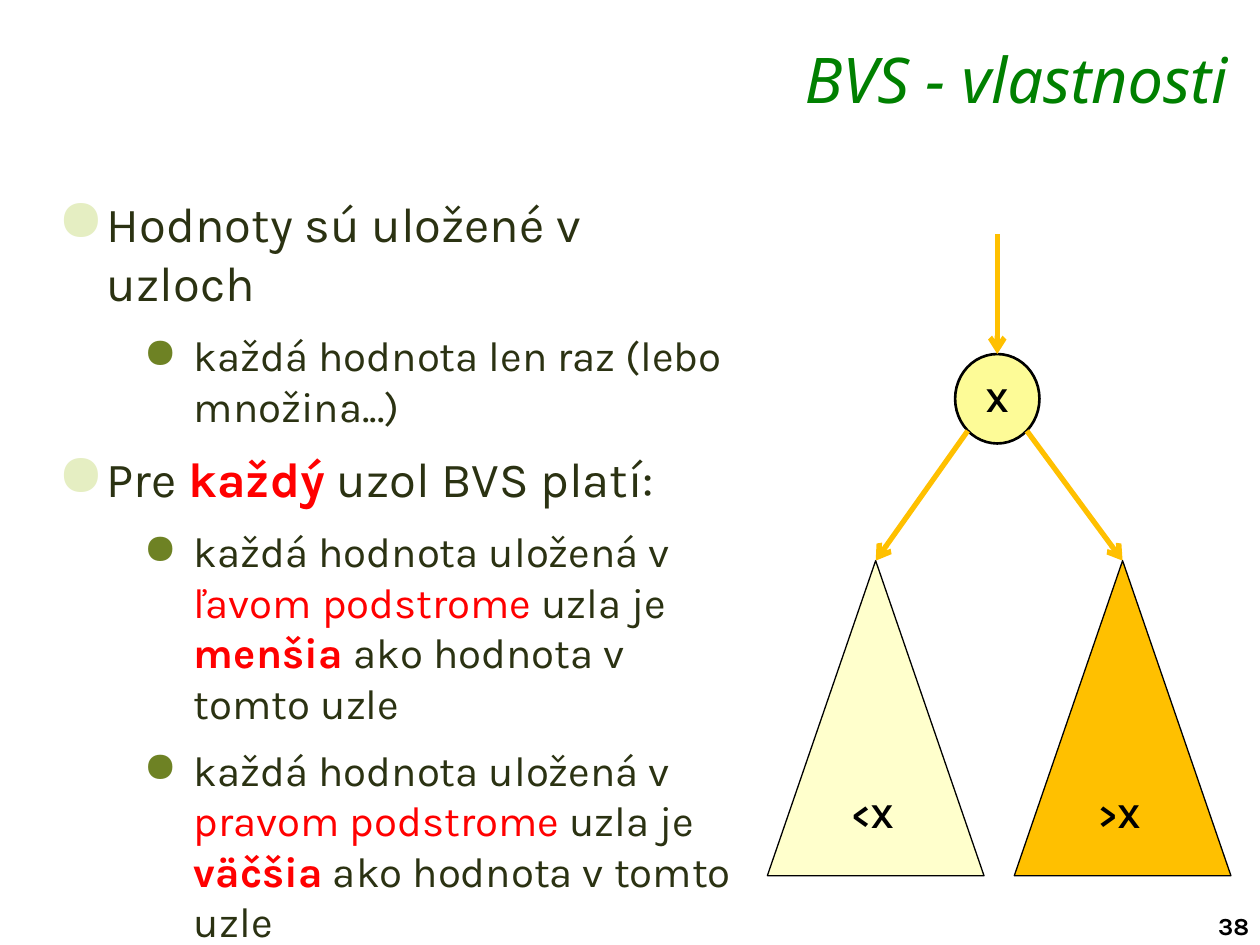
from lxml import etree
from pptx import Presentation
from pptx.dml.color import RGBColor
from pptx.enum.shapes import MSO_CONNECTOR, MSO_SHAPE
from pptx.enum.text import MSO_ANCHOR, PP_ALIGN
from pptx.oxml.ns import qn
from pptx.util import Pt

LEFT, MID, RIGHT = PP_ALIGN.LEFT, PP_ALIGN.CENTER, PP_ALIGN.RIGHT
TOP, CENTER = MSO_ANCHOR.TOP, MSO_ANCHOR.MIDDLE
DISC, PEAK = MSO_SHAPE.FLOWCHART_CONNECTOR, MSO_SHAPE.ISOSCELES_TRIANGLE
STRAIGHT = MSO_CONNECTOR.STRAIGHT

HUES = {"ink": "2B3212", "red": "FF0000", "green": "008000", "black": "000000",
        "pale": "E5EEC2", "olive": "6E8224", "gold": "FFC000",
        "lemon": "FDFB97", "cream": "FFFFCC"}

RUNS = {
    "plain": {"bold": False, "hue": "ink"},
    "red": {"bold": False, "hue": "red"},
    "strong": {"bold": True, "hue": "red"},
    "title": {"name": "Noto Sans", "size": Pt(36), "italic": True, "hue": "green"},
    "label": {"name": "Karla", "size": Pt(20), "bold": True, "hue": "black"},
    "page": {"name": "Karla", "size": Pt(14), "bold": True, "hue": "black"},
}
LEVELS = [
    {"size": 28, "left": 28.1, "hang": 28.1, "hue": "pale", "scale": 120},
    {"size": 24, "left": 77.8, "hang": 28.8, "hue": "olive", "scale": 100},
]
BODY = [
    (0, [("Hodnoty sú uložené v uzloch", "plain")]),
    (1, [("každá hodnota len raz (lebo množina...)", "plain")]),
    (0, [("Pre ", "plain"), ("každý", "strong"), (" uzol BVS platí:", "plain")]),
    (1, [("každá hodnota uložená v ", "plain"), ("ľavom podstrome ", "red"),
         ("uzla je ", "plain"), ("menšia ", "strong"),
         ("ako hodnota v tomto uzle", "plain")]),
    (1, [("každá hodnota uložená v ", "plain"), ("pravom podstrome ", "red"),
         ("uzla je ", "plain"), ("väčšia", "strong"),
         (" ako hodnota v tomto uzle", "plain")]),
]
NODE = (545.8, 202.3, 48.2, 51.1)
TREES = [("<X", 438.5, "cream", 553), (">X", 579.6, "gold", 586.8)]
TREE_TOP, TREE_WIDE, TREE_HIGH = 320.4, 123.8, 180
LABEL_IN, LABEL_TOP = 41, 450


def style(font, form):
    for key, val in form.items():
        if key == "hue":
            font.color.rgb = RGBColor.from_string(HUES[val])
        else:
            setattr(font, key, val)


def write(frame, text, kind, align=LEFT, anchor=TOP, wrap=False):
    frame.word_wrap = wrap
    frame.vertical_anchor = anchor
    para = frame.paragraphs[0]
    para.alignment = align
    run = para.add_run()
    run.text = text
    style(run.font, RUNS[kind])


def textbox(box):
    return slide.shapes.add_textbox(*map(Pt, box)).text_frame


def shape(kind, box, fill, width):
    item = slide.shapes.add_shape(kind, *map(Pt, box))
    item.shadow.inherit = False
    item.fill.solid()
    item.fill.fore_color.rgb = RGBColor.from_string(HUES[fill])
    item.line.color.rgb = RGBColor.from_string(HUES["black"])
    item.line.width = Pt(width)
    return item


def arrow(*ends):
    item = slide.shapes.add_connector(STRAIGHT, *map(Pt, ends))
    item.line.color.rgb = RGBColor.from_string(HUES["gold"])
    item.line.width = Pt(3)
    etree.SubElement(item.line._get_or_add_ln(), qn("a:tailEnd"), type="arrow")
    etree.SubElement(item._element.spPr, qn("a:effectLst"))


def bullet(para, level):
    prop = para._p.get_or_add_pPr()
    prop.set("marL", str(Pt(level["left"])))
    prop.set("indent", str(-Pt(level["hang"])))
    hue = etree.SubElement(prop, qn("a:buClr"))
    etree.SubElement(hue, qn("a:srgbClr"), val=HUES[level["hue"]])
    etree.SubElement(prop, qn("a:buSzPct"), val=str(level["scale"] * 1000))
    etree.SubElement(prop, qn("a:buChar"), char="●")


deck = Presentation()
deck.slide_width, deck.slide_height = Pt(720), Pt(540)
slide = deck.slides.add_slide(deck.slide_layouts[6])

write(textbox((689, 517, 36.7, 23.8)), "38", "page")

title = textbox((164.9, 22.3, 543.6, 41.8))
title.margin_top = Pt(1)
write(title, "BVS - vlastnosti", "title", RIGHT, wrap=True)

body = textbox((25.9, 107.3, 401.8, 378))
body.word_wrap = True
for spot, (depth, runs) in enumerate(BODY):
    level = LEVELS[depth]
    para = body.add_paragraph() if spot else body.paragraphs[0]
    bullet(para, level)
    gap = Pt(level["size"] * 0.2)
    para.space_before = gap if spot else Pt(0)
    para.space_after = gap
    for text, kind in runs:
        run = para.add_run()
        run.text = text
        style(run.font, {"name": "Karla", "size": Pt(level["size"]), **RUNS[kind]})

node = shape(DISC, NODE, "lemon", 1.5)
write(node.text_frame, "X", "label", MID, CENTER)
axis = NODE[0] + NODE[2] / 2
arrow(axis, 133.9, axis, NODE[1])

for text, left, fill, start in TREES:
    arrow(start, 246.2, left + TREE_WIDE / 2, TREE_TOP)
    shape(PEAK, (left, TREE_TOP, TREE_WIDE, TREE_HIGH), fill, 0.75)
    write(textbox((left + LABEL_IN, LABEL_TOP, 56.2, 36.7)), text, "label")

deck.save("out.pptx")
